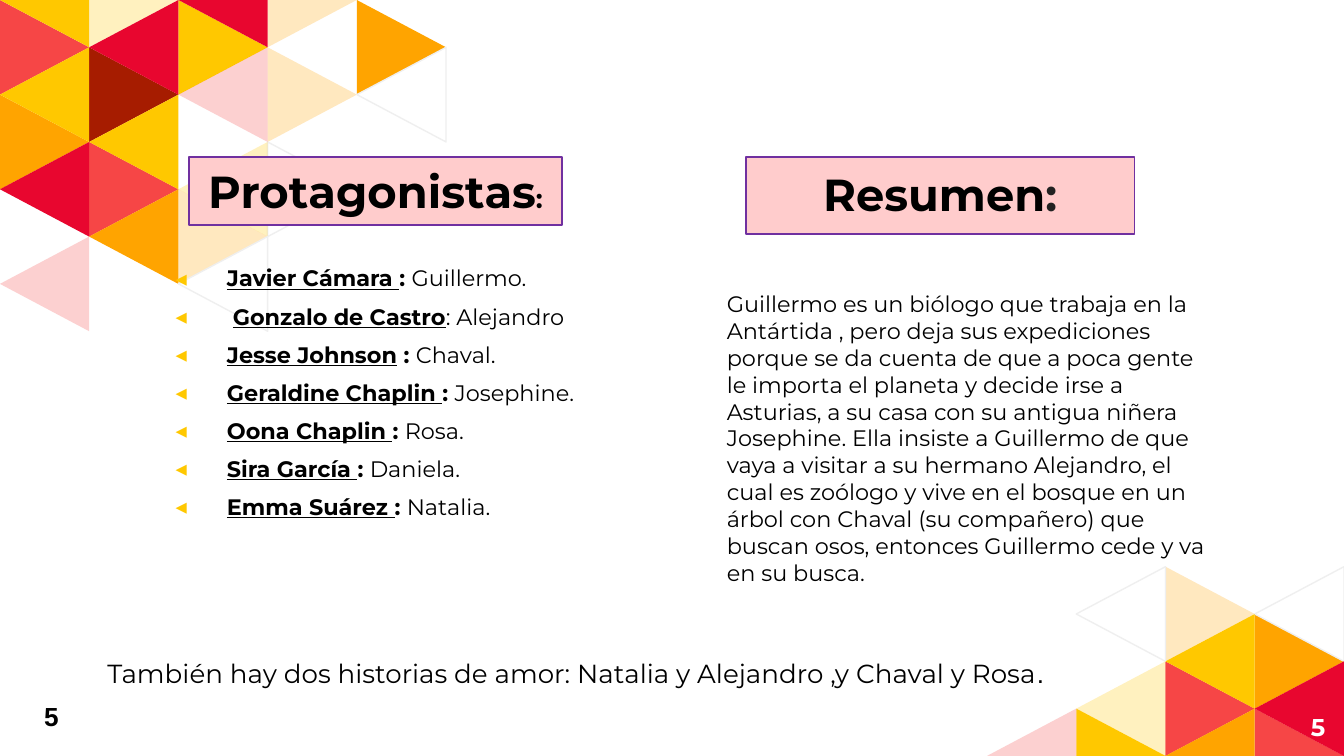
from lxml import etree
from pptx import Presentation
from pptx import util as u
from pptx.dml.color import RGBColor
from pptx.enum import shapes, text
from pptx.oxml import ns

COLORS = {
    "orange": "FFA400", "brown": "A61C00", "coral": "F64646", "yellow": "FFC800",
    "red": "E8062F", "white": "FFFFFF", "outline": "EFEFEF", "black": "000000",
    "pink": "FFCCCC", "purple": "7030A0", "dark": "222222",
}
COLUMN, ROW = 47.8, 25.35  # triangle width and half of its height
ANCHOR, ALIGN, FIT = text.MSO_ANCHOR, text.PP_ALIGN, text.MSO_AUTO_SIZE


def color(name):
    return RGBColor.from_string(COLORS[name])


def add_run(paragraph, words, size, name="black", bold=False, underline=False, font="Montserrat"):
    run = paragraph.add_run()
    run.text = words
    run.font.name, run.font.size = font, u.Pt(size)
    run.font.bold, run.font.underline = bold, underline
    run.font.color.rgb = color(name)


presentation = Presentation()
presentation.slide_width, presentation.slide_height = u.Pt(720), u.Pt(405)
slide = presentation.slides.add_slide(presentation.slide_layouts[6])

# Triangle mosaics: column, top row, direction, colour ("~" marks a pale tint)
top_corner = [
    (0, 2, "right", "orange"), (1, 1, "right", "brown"), (1, 3, "right", "coral"),
    (3, 1, "right", "~orange"), (2, 4, "right", "~orange"), (3, 3, "right", "white"),
    (0, 0, "right", "coral"), (1, -1, "right", "~yellow"), (2, 0, "right", "yellow"),
    (3, -1, "right", "~orange"), (4, 0, "right", "orange"),
    (0, 1, "left", "yellow"), (1, 2, "left", "yellow"), (0, 3, "left", "red"),
    (1, 4, "left", "orange"), (0, 5, "left", "~coral"), (2, 1, "left", "~coral"),
    (2, 3, "left", "~yellow"), (2, 5, "left", "white"), (4, 1, "left", "white"),
    (0, -1, "left", "yellow"), (1, 0, "left", "red"), (2, -1, "left", "red"),
]
bottom_corner = [
    (2, 0, "right", "~orange"), (3, 1, "right", "orange"), (1, 3, "right", "yellow"),
    (2, 2, "right", "coral"), (3, 3, "right", "coral"),
    (1, 0, "left", "white"), (3, 0, "left", "white"), (2, 1, "left", "yellow"),
    (1, 2, "left", "~yellow"), (2, 3, "left", "orange"), (3, 2, "left", "red"),
    (0, 3, "left", "~coral"),
]
mosaics = [(0, 0, 7, top_corner), (720 - 4 * COLUMN, 405 - 4 * ROW, 4, bottom_corner)]
for left, top, last_row, triangles in mosaics:
    for column, row, direction, name in triangles:
        base, tip = (column, column + 1) if direction == "right" else (column + 1, column)
        corners = [(base, row), (base, row + 2), (tip, row + 1)]
        # Rows beyond the slide edge are cut off
        points = [(u.Pt(left + x * COLUMN), u.Pt(top + min(max(y, 0), last_row) * ROW))
                  for x, y in corners]
        builder = slide.shapes.build_freeform(*points[0])
        builder.add_line_segments(points[1:], close=True)
        triangle = builder.convert_to_shape()
        triangle.shadow.inherit = False
        triangle.fill.solid()
        triangle.fill.fore_color.rgb = color(name.strip("~"))
        if name == "white":
            triangle.line.color.rgb = color("outline")
            triangle.line.width = u.Pt(0.75)
        else:
            triangle.line.fill.background()
        if name.startswith("~"):
            fill_color = triangle.fill._xPr.find(".//" + ns.qn("a:srgbClr"))
            etree.SubElement(fill_color, ns.qn("a:alpha"), val="25000")

# Cast list
cast = [
    [("Javier Cámara ", "bu"), (": ", "b"), ("Guillermo.", "")],
    [(" ", ""), ("Gonzalo de Castro", "bu"), (": Alejandro", "")],
    [("Jesse Johnson", "bu"), ("\u00a0: ".replace("\u00a0", " "), "b"), ("Chaval.", "")],
    [("Geraldine Chaplin ", "bu"), (": ", "b"), ("Josephine.", "")],
    [("Oona Chaplin ", "bu"), (": ", "b"), ("Rosa.", "")],
    [("Sira García ", "bu"), (": ", "b"), ("Daniela.", "")],
    [("Emma Suárez ", "bu"), (": ", "b"), ("Natalia.", "")],
]
cast_box = slide.shapes.add_textbox(u.Pt(78.5), u.Pt(134.6), u.Pt(247.7), u.Pt(168.5))
frame = cast_box.text_frame
frame.word_wrap = True
frame.margin_top = frame.margin_bottom = u.Pt(7.2)
for index, parts in enumerate(cast):
    paragraph = frame.add_paragraph() if index else frame.paragraphs[0]
    properties = paragraph._p.get_or_add_pPr()
    properties.set("marL", str(u.Pt(36)))
    properties.set("indent", str(u.Pt(-27.4)))
    bullet_color = etree.SubElement(properties, ns.qn("a:buClr"))
    etree.SubElement(bullet_color, ns.qn("a:srgbClr"), val=COLORS["yellow"])
    etree.SubElement(properties, ns.qn("a:buFont"), typeface="Montserrat")
    etree.SubElement(properties, ns.qn("a:buChar"), char="◂")
    if index:
        paragraph.space_before = u.Pt(6)
    for words, style in parts:
        add_run(paragraph, words, 12, bold="b" in style, underline="u" in style)

# Headings
headings = [
    ("Resumen", 399.6, 84.2, 208.1, 41.3, 24, "dark", ANCHOR.BOTTOM, 7.2),
    ("Protagonistas", 101.2, 84.2, 200, 36.4, 14, "black", ANCHOR.TOP, 3.6),
]
for words, left, top, width, height, colon_size, colon_color, anchor, margin in headings:
    heading = slide.shapes.add_shape(shapes.MSO_SHAPE.RECTANGLE, u.Pt(left), u.Pt(top),
                                     u.Pt(width), u.Pt(height))
    heading.shadow.inherit = False
    heading.fill.solid()
    heading.fill.fore_color.rgb = color("pink")
    heading.line.color.rgb = color("purple")
    heading.line.width = u.Pt(0.75)
    frame = heading.text_frame
    frame.word_wrap = True
    frame.vertical_anchor = anchor
    frame.margin_top = frame.margin_bottom = u.Pt(margin)
    paragraph = frame.paragraphs[0]
    paragraph.alignment = ALIGN.CENTER
    add_run(paragraph, words, 24, bold=True)
    add_run(paragraph, ":", colon_size, colon_color, bold=True)

# Summary
summary = slide.shapes.add_textbox(u.Pt(382.3), u.Pt(151.9), u.Pt(275.8), u.Pt(167))
summary.text_frame.word_wrap = True
summary.text_frame.auto_size = FIT.SHAPE_TO_FIT_TEXT
add_run(summary.text_frame.paragraphs[0],
        "Guillermo es un biólogo que trabaja en la Antártida , pero deja sus expediciones "
        "porque se da cuenta de que a poca gente le importa el planeta y decide irse a "
        "Asturias, a su casa con su antigua niñera Josephine. Ella insiste a Guillermo de "
        "que vaya a visitar a su hermano Alejandro, el cual es zoólogo y vive en el bosque "
        "en un árbol con Chaval (su compañero) que buscan osos, entonces Guillermo cede y "
        "va en su busca.", 12)

# Love stories
stories = slide.shapes.add_textbox(u.Pt(50.4), u.Pt(348.5), u.Pt(521.3), u.Pt(24.5))
stories.text_frame.word_wrap = False
stories.text_frame.auto_size = FIT.SHAPE_TO_FIT_TEXT
paragraph = stories.text_frame.paragraphs[0]
add_run(paragraph, "También hay dos historias de amor: Natalia y Alejandro ,y Chaval y Rosa", 14)
add_run(paragraph, ".", 14, font="Arial")

# Page numbers
right_number = slide.shapes.add_textbox(u.Pt(673.9), u.Pt(373.7), u.Pt(43.2), u.Pt(31))
right_number.text_frame.word_wrap = True
right_number.text_frame.vertical_anchor = ANCHOR.MIDDLE
paragraph = right_number.text_frame.paragraphs[0]
paragraph.alignment = ALIGN.RIGHT
add_run(paragraph, "5", 13, "white", bold=True)

left_number = slide.shapes.add_textbox(u.Pt(16.6), u.Pt(371.5), u.Pt(22.3), u.Pt(24.5))
left_number.text_frame.word_wrap = False
left_number.text_frame.auto_size = FIT.SHAPE_TO_FIT_TEXT
add_run(left_number.text_frame.paragraphs[0], "5", 14, bold=True, font="Arial")

presentation.save("out.pptx")
